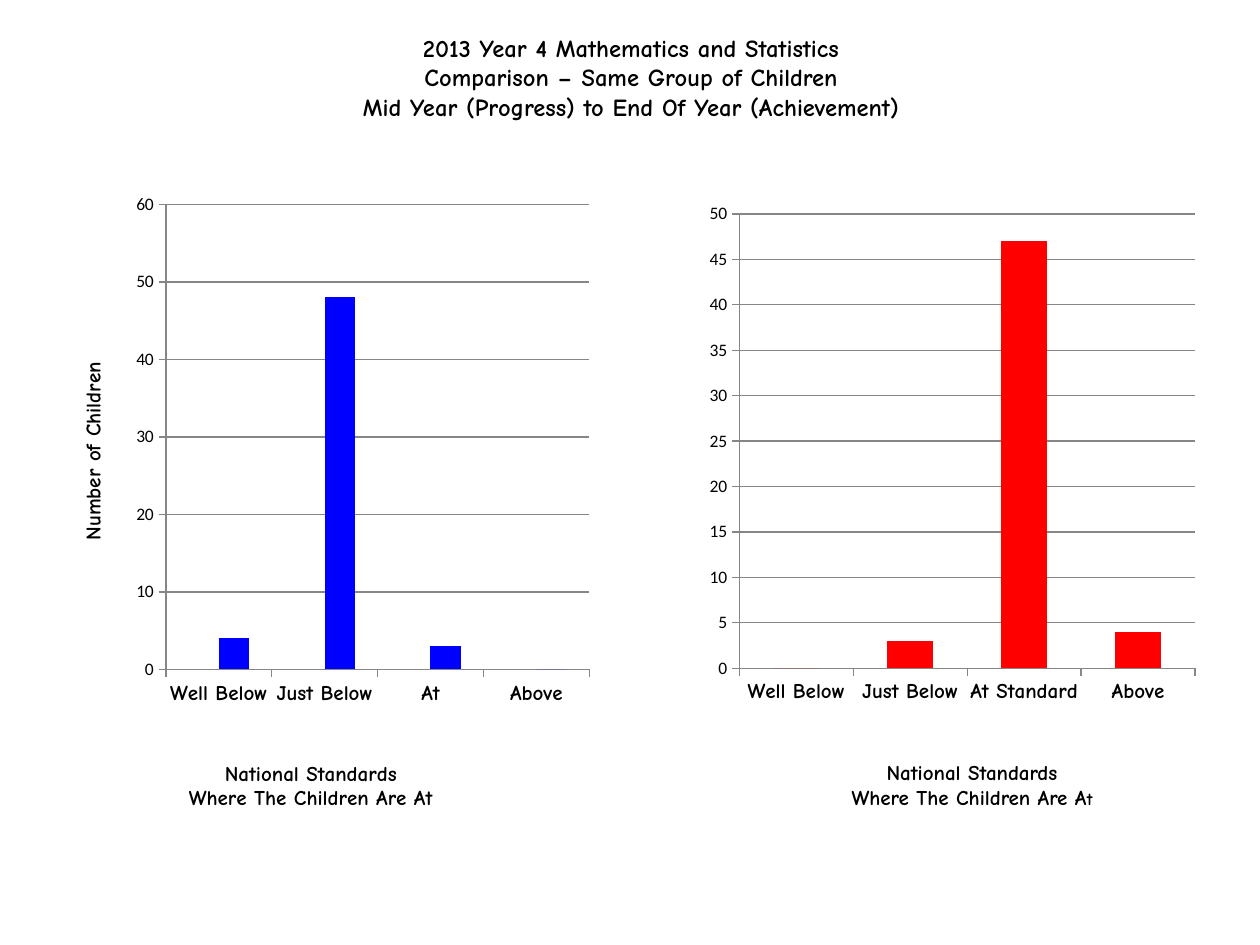
from lxml import etree
from pptx import Presentation
from pptx.chart.data import CategoryChartData
from pptx.dml.color import RGBColor
from pptx.enum.chart import XL_CHART_TYPE, XL_TICK_MARK
from pptx.enum.text import MSO_ANCHOR, PP_ALIGN
from pptx.oxml.ns import qn
from pptx.util import Inches, Pt

BLACK = RGBColor(0, 0, 0)
GREY = RGBColor(0x86, 0x86, 0x86)
STEEL = RGBColor(0x4F, 0x81, 0xBD)
BLUE = RGBColor(0, 0, 0xFF)
RED = RGBColor(0xFF, 0, 0)


def set_layout(parent, position, **settings):
    layout = parent.find(qn("c:layout"))
    if layout is not None:
        parent.remove(layout)
    layout = etree.Element(qn("c:layout"))
    parent.insert(position, layout)
    manual = etree.SubElement(layout, qn("c:manualLayout"))
    for name, value in settings.items():
        etree.SubElement(manual, qn(f"c:{name}")).set("val", str(value))


class SlideBuilder:
    heading_font = "Comic Neue"
    number_font = "Calibri"

    def __init__(self, slide):
        self.slide = slide

    def style_font(self, font, size, name=heading_font, bold=True):
        font.name = name
        font.size = Pt(size)
        font.bold = bold
        font.color.rgb = BLACK

    def style_frame(self, frame, size):
        for para in frame.paragraphs:
            para.alignment = PP_ALIGN.CENTER
            for span in para.runs:
                self.style_font(span.font, size)

    def title(self, text, left, top, width, height):
        box = self.slide.shapes.title
        box.left, box.top = Inches(left), Inches(top)
        box.width, box.height = Inches(width), Inches(height)
        frame = box.text_frame
        frame.text = text
        frame.vertical_anchor = MSO_ANCHOR.TOP
        self.style_frame(frame, 14)

    def caption(self, lines, last_letter, left, top, width, height):
        box = self.slide.shapes.add_textbox(
            Inches(left), Inches(top), Inches(width), Inches(height))
        frame = box.text_frame
        frame.word_wrap = True
        frame.text = lines
        self.style_frame(frame, 12)
        span = frame.paragraphs[-1].add_run()
        span.text = last_letter
        self.style_font(span.font, 10)

    def axis_title(self, axis, text, x, y, rotation=0):
        title = axis.axis_title
        frame = title.text_frame
        frame.text = text
        self.style_frame(frame, 12)
        body = frame._txBody.bodyPr
        body.set("rot", str(rotation * 60000))
        body.set("vert", "horz")
        set_layout(title._element, 1, xMode="edge", yMode="edge", x=x, y=y)

    def column_chart(self, categories, series, maximum, step, plot_area,
                     left, top, width, height):
        data = CategoryChartData()
        data.categories = categories
        for name, values, _ in series:
            data.add_series(name, values)
        chart = self.slide.shapes.add_chart(
            XL_CHART_TYPE.COLUMN_CLUSTERED, Inches(left), Inches(top),
            Inches(width), Inches(height), data).chart
        chart.has_title = False
        chart.has_legend = False
        self.style_font(chart.font, 10, self.number_font, False)

        plot = chart.plots[0]
        plot.gap_width = 150
        plot.overlap = 0
        plot.vary_by_categories = False
        for column, (_, _, color) in zip(plot.series, series):
            column.format.fill.solid()
            column.format.fill.fore_color.rgb = color

        values = chart.value_axis
        values.minimum_scale, values.maximum_scale = 0, maximum
        values.major_unit = step
        values.has_major_gridlines = True
        for axis in (chart.category_axis, values):
            axis.major_tick_mark = XL_TICK_MARK.OUTSIDE
            axis.minor_tick_mark = XL_TICK_MARK.NONE
        for item in (chart.category_axis, values, values.major_gridlines):
            item.format.line.color.rgb = GREY
            item.format.line.width = Pt(0.75)
        self.style_font(chart.category_axis.tick_labels.font, 12)

        x, y, w, h = plot_area
        set_layout(chart._chartSpace.chart.plotArea, 0, layoutTarget="inner",
                   xMode="edge", yMode="edge", x=x, y=y, w=w, h=h)
        return chart


def main():
    deck = Presentation()
    deck.slide_width, deck.slide_height = Inches(10), Inches(7.5)
    page = SlideBuilder(deck.slides.add_slide(deck.slide_layouts[5]))

    page.title("2013 Year 4 Mathematics and Statistics\v"
               "Comparison – Same Group of Children\v"
               "Mid Year (Progress) to End Of Year (Achievement)",
               0.51, 0.21, 9, 1.25)

    mid_year = page.column_chart(
        ["Well Below", "Just Below", "At", "Above"],
        [("Series 1", [None] * 4, STEEL), ("Series 2", [4, 48, 3, 0], BLUE)],
        60, 10, (0.205, 0.029, 0.776, 0.699), 0.43, 1.47, 4.33, 5.28)
    page.axis_title(mid_year.category_axis,
                    "National Standards\nWhere The Children Are At", 0.24, 0.86)
    page.axis_title(mid_year.value_axis, "Number of Children", 0.04, 0.26, -90)

    page.column_chart(
        ["Well Below", "Just Below", "At Standard", "Above"],
        [("Series 1", [0, 3, 47, 4], RED)],
        50, 5, (0.077, 0.05, 0.876, 0.789), 5.55, 1.47, 4.13, 4.57)
    page.caption("National Standards\nWhere The Children Are A", "t",
                 6.26, 5.98, 2.91, 0.5)

    deck.save("out.pptx")


if __name__ == "__main__":
    main()
